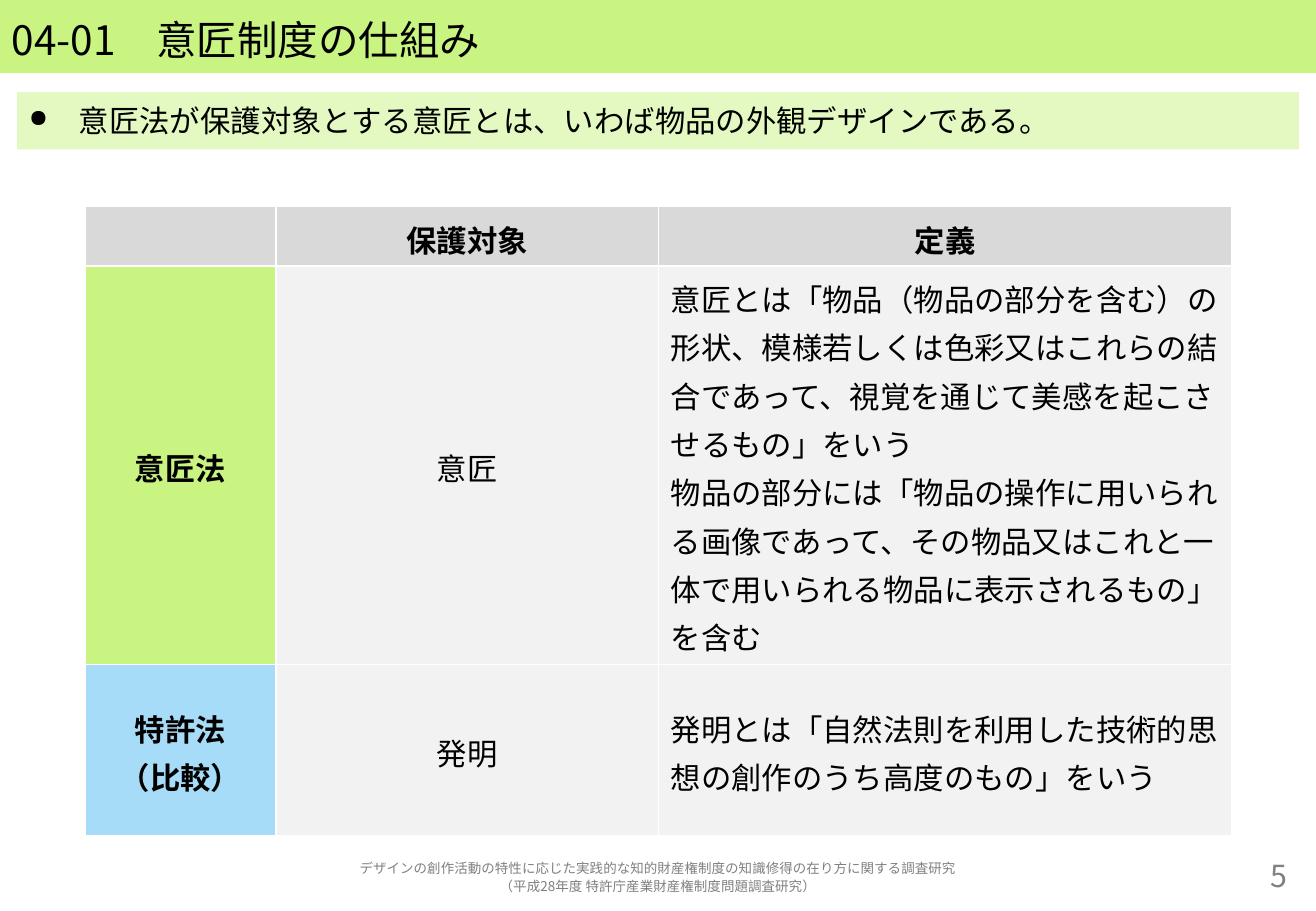
from dataclasses import dataclass

from lxml import etree
from pptx import Presentation
from pptx.dml.color import RGBColor
from pptx.enum.shapes import MSO_SHAPE
from pptx.enum.text import MSO_ANCHOR, PP_ALIGN
from pptx.oxml.ns import qn
from pptx.util import Pt

EMU_PER_PX = 9144  # 100 px to the inch
LEFT, CENTER, RIGHT = PP_ALIGN.LEFT, PP_ALIGN.CENTER, PP_ALIGN.RIGHT
TOP, MIDDLE = MSO_ANCHOR.TOP, MSO_ANCHOR.MIDDLE
RECTANGLE = MSO_SHAPE.RECTANGLE
JAPANESE_FONT = "Noto Sans CJK JP"
COLORS = {
    "green": "C9F482",
    "pale_green": "E4F9C1",
    "blue": "A7DCF9",
    "header": "D9D9D9",
    "cell": "F2F2F2",
    "border": "FFFFFF",
    "text": "000000",
    "muted": "808080",
}


@dataclass(frozen=True)
class TextStyle:
    size: int = 18
    color: str = "text"
    latin: str = JAPANESE_FONT
    align: PP_ALIGN = LEFT
    bold: bool = False


@dataclass(frozen=True)
class TextBlock:
    left: int
    top: int
    width: int
    height: int
    text: str
    style: TextStyle
    fill: str | None = None
    anchor: MSO_ANCHOR = MIDDLE
    bullet_indent: int = 0


@dataclass(frozen=True)
class TableCell:
    text: str
    fill: str
    style: TextStyle


HEADING = TextStyle(latin="Arial", align=CENTER, bold=True)
SUBJECT = TextStyle(latin="Arial", align=CENTER)
DEFINITION = TextStyle(latin="Arial")

BLOCKS = [
    TextBlock(0, 0, 1083, 60, "04-01　意匠制度の仕組み", TextStyle(size=24), fill="green"),
    TextBlock(14, 76, 1055, 47, "意匠法が保護対象とする意匠とは、いわば物品の外観デザインである。",
              TextStyle(), fill="pale_green", anchor=TOP, bullet_indent=41),
    TextBlock(935, 704, 134, 31, "5", TextStyle(color="muted", align=RIGHT)),
    TextBlock(14, 706, 1055, 31,
              "デザインの創作活動の特性に応じた実践的な知的財産権制度の知識修得の在り方に関する調査研究\n"
              "（平成28年度 特許庁産業財産権制度問題調査研究）",
              TextStyle(size=8, color="muted", align=CENTER)),
]

TABLE_LEFT, TABLE_TOP = 70, 170
COLUMN_WIDTHS = [157, 315, 472]
ROW_HEIGHTS = [49, 328, 141]
TABLE_ROWS = [
    [TableCell(text, "header", HEADING) for text in ("", "保護対象", "定義")],
    [
        TableCell("意匠法", "green", HEADING),
        TableCell("意匠", "cell", SUBJECT),
        TableCell("意匠とは「物品（物品の部分を含む）の形状、模様若しくは色彩又はこれらの結合であって、"
                  "視覚を通じて美感を起こさせるもの」をいう\n"
                  "物品の部分には「物品の操作に用いられる画像であって、その物品又はこれと一体で用いられる"
                  "物品に表示されるもの」を含む", "cell", DEFINITION),
    ],
    [
        TableCell("特許法\n（比較）", "blue", HEADING),
        TableCell("発明", "cell", SUBJECT),
        TableCell("発明とは「自然法則を利用した技術的思想の創作のうち高度のもの」をいう",
                  "cell", DEFINITION),
    ],
]


def px(length: int) -> int:
    return length * EMU_PER_PX


def rgb(name: str) -> RGBColor:
    return RGBColor.from_string(COLORS[name])


def write_text(text_frame, text: str, style: TextStyle) -> None:
    """Write one paragraph per line of text, all in the same style."""
    text_frame.text = text
    for paragraph in text_frame.paragraphs:
        paragraph.alignment = style.align
        paragraph.line_spacing = 1.1
        font = paragraph.font
        font.size = Pt(style.size)
        font.bold = style.bold
        font.name = style.latin
        font.color.rgb = rgb(style.color)
        defaults = paragraph._p.pPr.find(qn("a:defRPr"))
        etree.SubElement(defaults, qn("a:ea"), typeface=JAPANESE_FONT)


def add_bullet(paragraph, indent: int) -> None:
    properties = paragraph._p.get_or_add_pPr()
    properties.set("marL", str(px(indent)))
    properties.set("indent", str(-px(indent)))
    defaults = properties.find(qn("a:defRPr"))
    defaults.addprevious(etree.Element(qn("a:buSzPct"), val="80000"))
    defaults.addprevious(etree.Element(qn("a:buChar"), char="●"))


def add_block(slide, block: TextBlock) -> None:
    box = [px(length) for length in (block.left, block.top, block.width, block.height)]
    if block.fill:
        shape = slide.shapes.add_shape(RECTANGLE, *box)
        shape.shadow.inherit = False
        shape.fill.solid()
        shape.fill.fore_color.rgb = rgb(block.fill)
        shape.line.fill.background()
    else:
        shape = slide.shapes.add_textbox(*box)
    text_frame = shape.text_frame
    text_frame.word_wrap = True
    text_frame.vertical_anchor = block.anchor
    write_text(text_frame, block.text, block.style)
    if block.bullet_indent:
        add_bullet(text_frame.paragraphs[0], block.bullet_indent)


def add_borders(cell) -> None:
    properties = cell._tc.get_or_add_tcPr()
    for position, side in enumerate(("lnL", "lnR", "lnT", "lnB")):
        line = etree.Element(qn(f"a:{side}"), w=str(Pt(1)))
        fill = etree.SubElement(line, qn("a:solidFill"))
        etree.SubElement(fill, qn("a:srgbClr"), val=COLORS["border"])
        properties.insert(position, line)


def add_comparison_table(slide) -> None:
    frame = slide.shapes.add_table(
        len(ROW_HEIGHTS), len(COLUMN_WIDTHS), px(TABLE_LEFT), px(TABLE_TOP),
        px(sum(COLUMN_WIDTHS)), px(sum(ROW_HEIGHTS)))
    table = frame.table
    for column, width in zip(table.columns, COLUMN_WIDTHS):
        column.width = px(width)
    for row, height, contents in zip(table.rows, ROW_HEIGHTS, TABLE_ROWS):
        row.height = px(height)
        for cell, content in zip(row.cells, contents):
            cell.fill.solid()
            cell.fill.fore_color.rgb = rgb(content.fill)
            cell.vertical_anchor = MIDDLE
            add_borders(cell)
            write_text(cell.text_frame, content.text, content.style)


def main() -> None:
    presentation = Presentation()
    presentation.slide_width, presentation.slide_height = px(1083), px(750)
    slide = presentation.slides.add_slide(presentation.slide_layouts[6])
    for block in BLOCKS:
        add_block(slide, block)
    add_comparison_table(slide)
    presentation.save("out.pptx")


if __name__ == "__main__":
    main()
